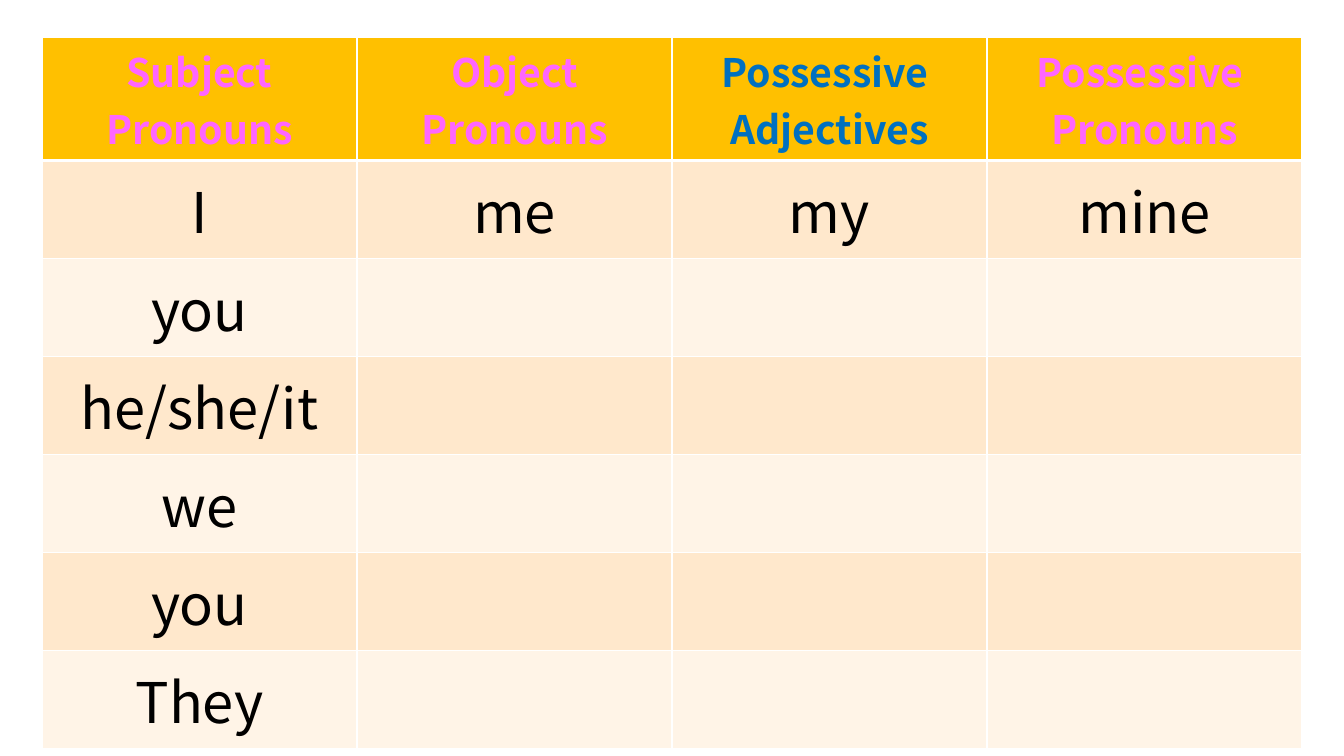
from lxml import etree
from pptx import Presentation
from pptx import util as u
from pptx.dml.color import RGBColor
from pptx.enum import text
from pptx.oxml.ns import qn

PX = 9071.43
FONT = "Noto Sans CJK JP"
COLOURS = {
    "header": "FFC000",
    "odd": "FFE8CC",
    "even": "FFF4E7",
    "border": "FFFFFF",
    "pink": "FF66FF",
    "blue": "0070C0",
    "black": "000000",
}
HEADERS = [
    (["Subject", "Pronouns"], "pink"),
    (["Object", "Pronouns"], "pink"),
    (["Possessive ", "Adjectives"], "blue"),
    (["Possessive ", "Pronouns"], "pink"),
]
PRONOUNS = [
    ["I", "me", "my", "mine"],
    ["you"],
    ["he/she/it"],
    ["we"],
    ["you"],
    ["They"],
]
LEFT, TOP = 42, 37
COLUMN_WIDTH, ROW_HEIGHT = 315, 98


def px(length):
    return u.Emu(round(length * PX))


def colour(name):
    return RGBColor.from_string(COLOURS[name])


def write(frame, lines, *, size, color, bold=False):
    for index, line in enumerate(lines):
        para = frame.paragraphs[0] if index == 0 else frame.add_paragraph()
        para.alignment = text.PP_ALIGN.CENTER
        span = para.add_run()
        span.text = line
        span.font.name = FONT
        span.font.size = u.Pt(size)
        span.font.bold = bold
        span.font.color.rgb = colour(color)


def style_cell(cell, fill, *, top=1, bottom=1):
    properties = cell._tc.get_or_add_tcPr()
    widths = {"a:lnL": 1, "a:lnR": 1, "a:lnT": top, "a:lnB": bottom}
    for tag, width in widths.items():
        line = etree.SubElement(properties, qn(tag), w=str(u.Pt(width)))
        solid = etree.SubElement(line, qn("a:solidFill"))
        etree.SubElement(solid, qn("a:srgbClr"), val=COLOURS["border"])
    cell.fill.solid()
    cell.fill.fore_color.rgb = colour(fill)


def add_pronoun_table(page):
    rows, columns = len(PRONOUNS) + 1, len(HEADERS)
    frame = page.shapes.add_table(
        rows, columns, px(LEFT), px(TOP),
        px(columns * COLUMN_WIDTH), px(rows * ROW_HEIGHT),
    )
    table = frame.table
    for column in table.columns:
        column.width = px(COLUMN_WIDTH)
    for row in table.rows:
        row.height = px(ROW_HEIGHT)
    for index, (lines, color) in enumerate(HEADERS):
        cell = table.cell(0, index)
        style_cell(cell, "header", bottom=3)
        write(cell.text_frame, lines, size=28, color=color, bold=True)
    for number, words in enumerate(PRONOUNS, start=1):
        for index in range(columns):
            cell = table.cell(number, index)
            style_cell(cell, "odd" if number % 2 else "even", top=3 if number == 1 else 1)
            cell.vertical_anchor = text.MSO_ANCHOR.MIDDLE
            if index < len(words):
                write(cell.text_frame, [words[index]], size=40, color="black")


def main():
    deck = Presentation()
    deck.slide_width, deck.slide_height = px(1344), px(756)
    page = deck.slides.add_slide(deck.slide_layouts[6])
    add_pronoun_table(page)
    deck.save("out.pptx")


if __name__ == "__main__":
    main()
